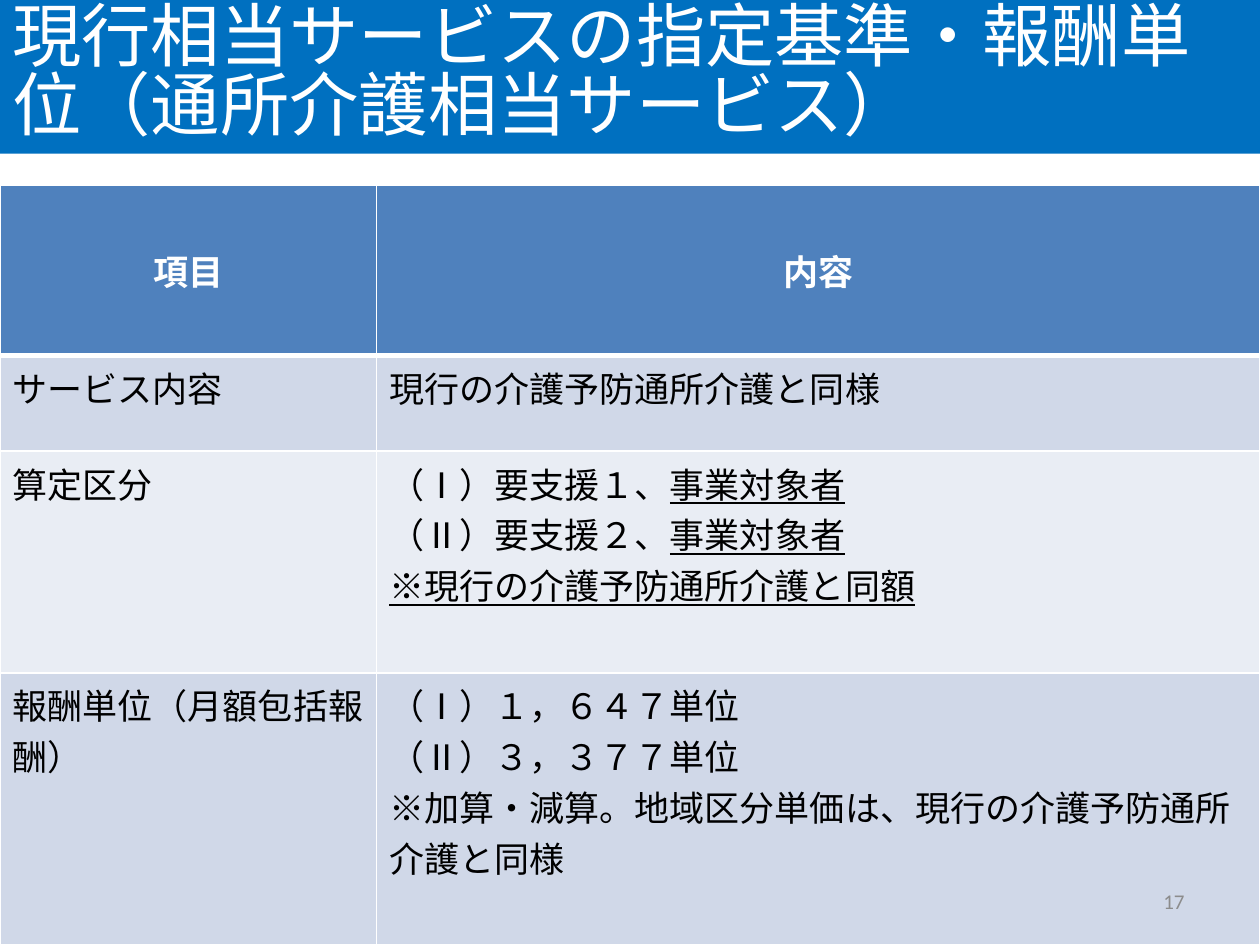
from lxml.etree import SubElement
from pptx import Presentation
from pptx.dml.color import RGBColor
from pptx.enum.shapes import MSO_SHAPE
from pptx.enum.text import MSO_ANCHOR as Anchor, PP_ALIGN as Align
from pptx.oxml.ns import qn
from pptx.util import Inches, Pt

FONT = "Calibri"
COLORS = {
    "title": "0070C0", "header": "4F81BD", "odd": "D0D8E8", "even": "E9EDF4",
    "white": "FFFFFF", "black": "000000", "number": "8C8C8C",
}
WIDTH, HEIGHT = 10, 7.5
TITLE = "現行相当サービスの指定基準・報酬単位（通所介護相当サービス）"
PAGE_NUMBER = "17"
HEADER = ("項目", "内容")
# Each row: label, then paragraphs of (text, underlined) runs
ROWS = [
    ("サービス内容", [[("現行の介護予防通所介護と同様", False)]]),
    ("算定区分", [
        [("（Ⅰ）要支援１、", False), ("事業対象者", True)],
        [("（Ⅱ）要支援２、", False), ("事業対象者", True)],
        [("※現行の介護予防通所介護と同額", True)],
    ]),
    ("報酬単位（月額包括報酬）", [
        [("（Ⅰ）１，６４７単位", False)],
        [("（Ⅱ）３，３７７単位", False)],
        [("※加算・減算。地域区分単価は、現行の介護予防通所介護と同様", False)],
    ]),
]
COLUMN_WIDTHS = (2.99, 7.01)
ROW_HEIGHTS = (1.35, 0.76, 1.76, 2.16)


def rgb(name):
    return RGBColor.from_string(COLORS[name])


def plain(text):
    return [[(text, False)]]


def write(frame, paragraphs, size, color, bold=False, align=Align.LEFT, spacing=None):
    frame.word_wrap = True
    for index, runs in enumerate(paragraphs):
        paragraph = frame.paragraphs[0] if index == 0 else frame.add_paragraph()
        paragraph.alignment = align
        paragraph.line_spacing = spacing
        for text, underlined in runs:
            run = paragraph.add_run()
            run.text = text
            font = run.font
            font.name, font.size, font.bold = FONT, Pt(size), bold
            font.underline = underlined
            font.color.rgb = rgb(color)


def set_borders(cell, top, bottom):
    """Draw white borders; they must precede the fill in the cell properties."""
    properties = cell._tc.get_or_add_tcPr()
    sides = {"lnL": 1, "lnR": 1, "lnT": top, "lnB": bottom}
    for index, (side, width) in enumerate(sides.items()):
        line = SubElement(properties, qn(f"a:{side}"), w=str(Pt(width)))
        fill = SubElement(line, qn("a:solidFill"))
        SubElement(fill, qn("a:srgbClr"), val=COLORS["white"])
        properties.insert(index, line)


def add_title(slide):
    shape = slide.shapes.add_shape(
        MSO_SHAPE.RECTANGLE, 0, Inches(-0.03), Inches(WIDTH), Inches(1.25))
    shape.shadow.inherit = False
    shape.fill.solid()
    shape.fill.fore_color.rgb = rgb("title")
    shape.line.fill.background()
    shape.text_frame.vertical_anchor = Anchor.MIDDLE
    write(shape.text_frame, plain(TITLE), 39.6, "white", spacing=0.83)


def add_standards_table(slide):
    table_height = sum(ROW_HEIGHTS)
    table = slide.shapes.add_table(
        len(ROW_HEIGHTS), len(COLUMN_WIDTHS), 0, Inches(HEIGHT - table_height),
        Inches(WIDTH), Inches(table_height)).table
    for column, width in zip(table.columns, COLUMN_WIDTHS):
        column.width = Inches(width)
    for row, height in zip(table.rows, ROW_HEIGHTS):
        row.height = Inches(height)

    contents = [[plain(text) for text in HEADER]]
    contents += [[plain(label), details] for label, details in ROWS]
    for row_index, row in enumerate(contents):
        is_header = row_index == 0
        fill = "header" if is_header else "odd" if row_index % 2 else "even"
        for column_index, paragraphs in enumerate(row):
            cell = table.cell(row_index, column_index)
            cell.fill.solid()
            cell.fill.fore_color.rgb = rgb(fill)
            set_borders(cell, 3 if row_index == 1 else 1, 3 if is_header else 1)
            cell.vertical_anchor = Anchor.MIDDLE if is_header else Anchor.TOP
            write(cell.text_frame, paragraphs, 20, "white" if is_header else "black",
                  bold=is_header, align=Align.CENTER if is_header else Align.LEFT)


def add_page_number(slide):
    box = slide.shapes.add_textbox(Inches(7.17), Inches(6.95), Inches(2.33), Inches(0.4))
    box.text_frame.vertical_anchor = Anchor.MIDDLE
    write(box.text_frame, plain(PAGE_NUMBER), 12, "number", align=Align.RIGHT)


def main():
    presentation = Presentation()
    presentation.slide_width, presentation.slide_height = Inches(WIDTH), Inches(HEIGHT)
    slide = presentation.slides.add_slide(presentation.slide_layouts[6])
    add_title(slide)
    add_standards_table(slide)
    add_page_number(slide)
    presentation.save("out.pptx")


if __name__ == "__main__":
    main()
